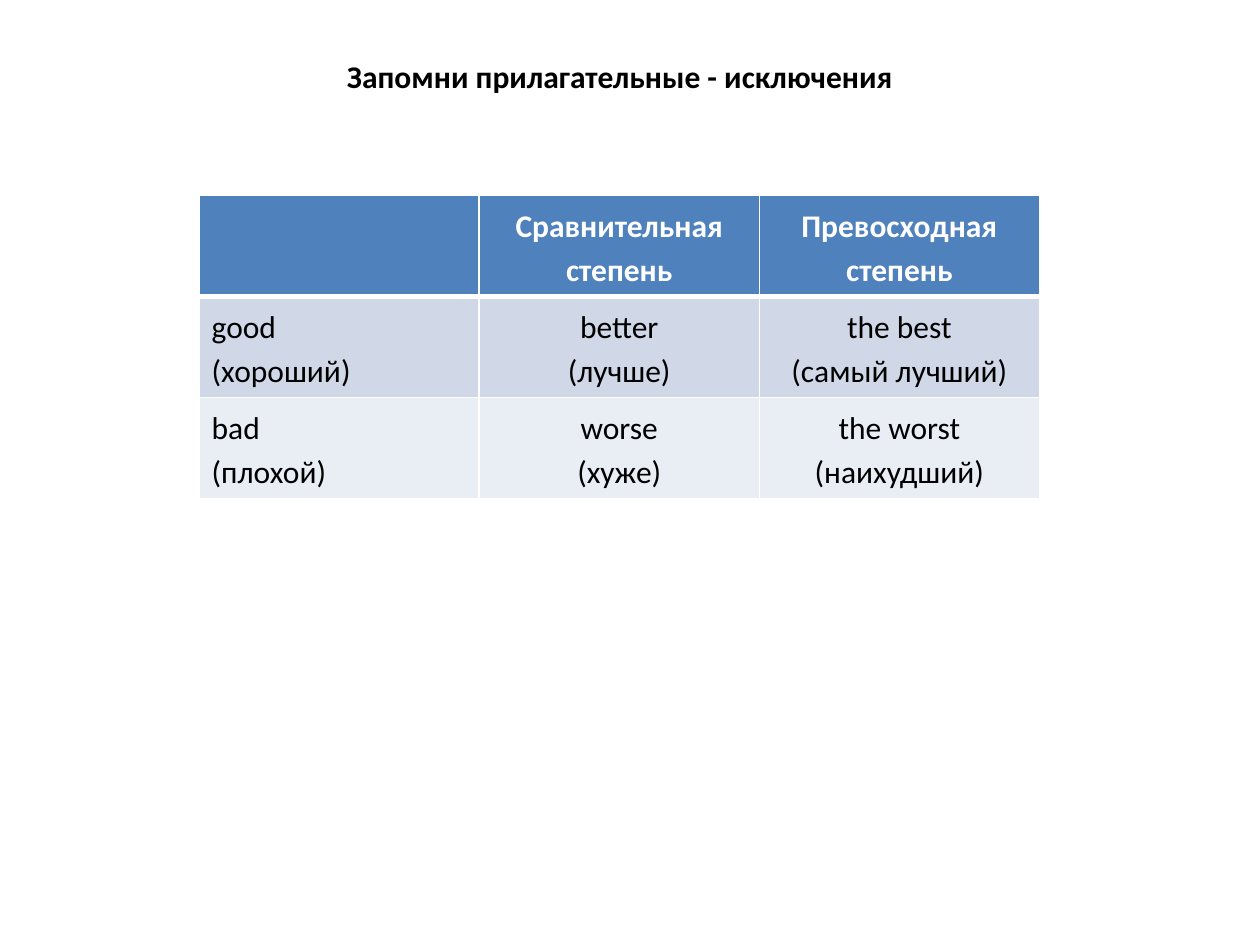
"""Build a slide with a table of irregular English adjectives."""
from lxml import etree
from pptx import Presentation
from pptx.dml.color import RGBColor
from pptx.enum import text as en
from pptx.oxml import ns
from pptx.util import Inches, Pt

WHITE = RGBColor(0xFF, 0xFF, 0xFF)
BLACK = RGBColor(0x00, 0x00, 0x00)
BLUE = RGBColor(0x4F, 0x81, 0xBD)
PALE = RGBColor(0xD0, 0xD8, 0xE8)
LIGHT = RGBColor(0xE9, 0xED, 0xF4)
LEFT, MID = en.PP_ALIGN.LEFT, en.PP_ALIGN.CENTER


def write(frame, words, color=BLACK, bold=False, align=MID, space=None):
    for n, line in enumerate(words.split("\n")):
        para = frame.add_paragraph() if n else frame.paragraphs[0]
        para.alignment = align
        para.line_spacing = space
        font = para.font
        if line:
            run = para.add_run()
            run.text = line
            font = run.font
        font.name, font.size = "Calibri", Pt(18)
        font.bold = bold
        font.color.rgb = color


def edge(cell, side, width):
    props = cell._tc.get_or_add_tcPr()
    line = etree.SubElement(props, ns.qn("a:" + side), w=str(Pt(width)))
    fill = etree.SubElement(line, ns.qn("a:solidFill"))
    etree.SubElement(fill, ns.qn("a:srgbClr"), val=str(WHITE))


deck = Presentation()
deck.slide_width, deck.slide_height = Inches(10), Inches(7.5)
slide = deck.slides.add_slide(deck.slide_layouts[6])

rows = [
    ["", "Сравнительная степень", "Превосходная степень"],
    ["good\n(хороший)", "better\n(лучше)", "the best\n(самый лучший)"],
    ["bad\n(плохой)", "worse\n(хуже)", "the worst\n(наихудший)"],
]
fills = [BLUE, PALE, LIGHT]
grid = slide.shapes.add_table(
    3, 3, Inches(1.58), Inches(1.55), Inches(6.67), Inches(2.1)).table

for r, row in enumerate(rows):
    head = r == 0
    for c, words in enumerate(row):
        cell = grid.cell(r, c)
        write(cell.text_frame, words, color=WHITE if head else BLACK,
              bold=head, align=MID if c else LEFT, space=1.15)
        for side in ("lnL", "lnR", "lnT", "lnB"):
            thick = (r, side) in ((0, "lnB"), (1, "lnT"))
            edge(cell, side, 3 if thick else 1)
        cell.fill.solid()
        cell.fill.fore_color.rgb = fills[r]

title = slide.shapes.add_textbox(
    Inches(2.64), Inches(0.4), Inches(4.56), Inches(0.4)).text_frame
title.word_wrap = False
title.auto_size = en.MSO_AUTO_SIZE.SHAPE_TO_FIT_TEXT
write(title, "Запомни прилагательные - исключения", bold=True)

deck.save("out.pptx")
